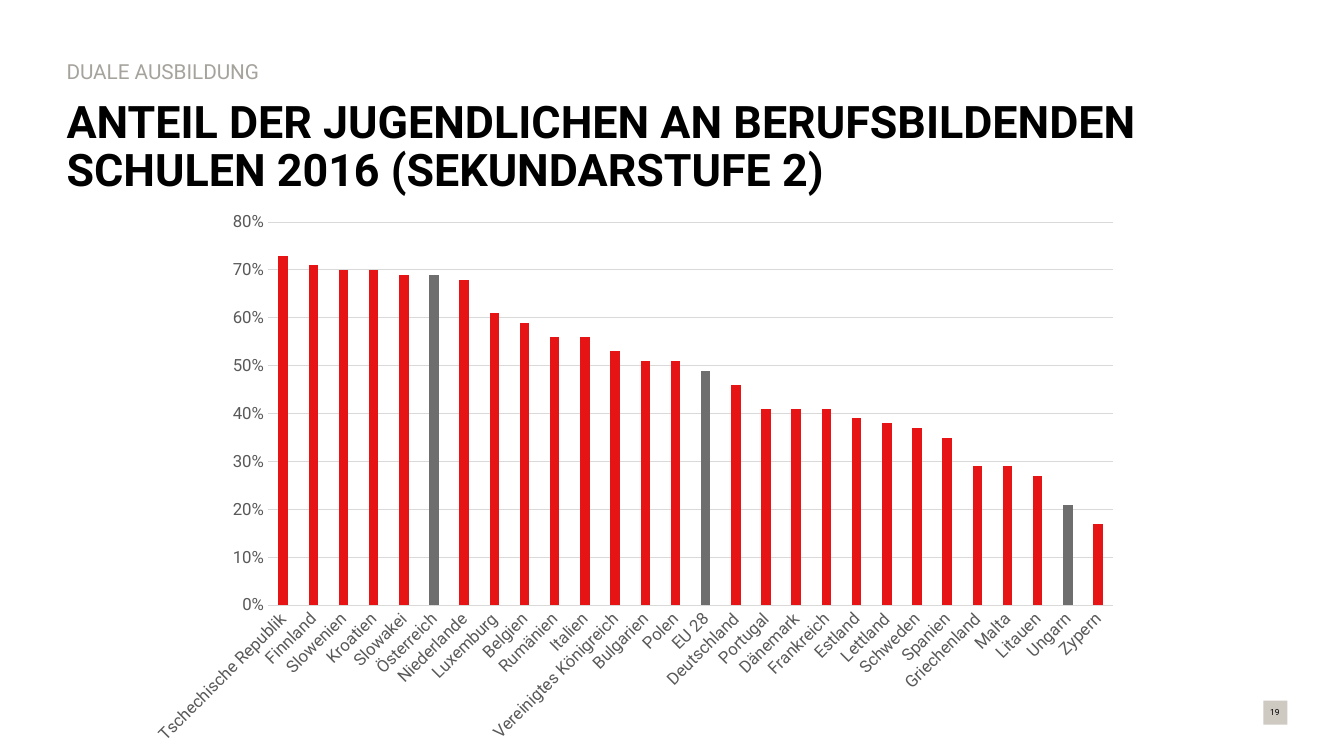
from pptx import Presentation
from pptx.chart.data import CategoryChartData
from pptx.dml.color import RGBColor
from pptx.enum.chart import XL_CHART_TYPE, XL_TICK_MARK
from pptx.enum.shapes import MSO_SHAPE
from pptx.enum.text import MSO_ANCHOR, MSO_AUTO_SIZE, PP_ALIGN
from pptx.oxml import parse_xml
from pptx.oxml.ns import nsdecls, qn
from pptx.util import Inches, Pt

COLUMN = XL_CHART_TYPE.COLUMN_CLUSTERED
NO_TICK = XL_TICK_MARK.NONE
RECT = MSO_SHAPE.RECTANGLE
MIDDLE = MSO_ANCHOR.MIDDLE
NO_FIT = MSO_AUTO_SIZE.NONE
LEFT, CENTER = PP_ALIGN.LEFT, PP_ALIGN.CENTER

FONT = "Roboto"
BLACK = RGBColor(0x00, 0x00, 0x00)
RED = RGBColor(0xE6, 0x14, 0x14)
GREY = RGBColor(0x6E, 0x6E, 0x6E)
LABEL = RGBColor(0x59, 0x59, 0x59)
GRID = RGBColor(0xD9, 0xD9, 0xD9)
TAUPE = RGBColor(0xA6, 0xA3, 0x9D)
SAND = RGBColor(0xCE, 0xCA, 0xC2)

SHARES = {
    "Tschechische Republik": 0.73, "Finnland": 0.71, "Slowenien": 0.7,
    "Kroatien": 0.7, "Slowakei": 0.69, "Österreich": 0.69,
    "Niederlande": 0.68, "Luxemburg": 0.61, "Belgien": 0.59,
    "Rumänien": 0.56, "Italien": 0.56, "Vereinigtes Königreich": 0.53,
    "Bulgarien": 0.51, "Polen": 0.51, "EU 28": 0.49, "Deutschland": 0.46,
    "Portugal": 0.41, "Dänemark": 0.41, "Frankreich": 0.41,
    "Estland": 0.39, "Lettland": 0.38, "Schweden": 0.37, "Spanien": 0.35,
    "Griechenland": 0.29, "Malta": 0.29, "Litauen": 0.27, "Ungarn": 0.21,
    "Zypern": 0.17,
}
MARKED = ("Österreich", "EU 28", "Ungarn")


def place(shape, left, top, width, height):
    shape.left, shape.top = Inches(left), Inches(top)
    shape.width, shape.height = Inches(width), Inches(height)


def set_font(font, size, color, bold=False):
    font.name, font.size, font.bold = FONT, Pt(size), bold
    font.color.rgb = color


def write(shape, text, size, color, align=LEFT, bold=False):
    """Fill a shape with one formatted paragraph and return it."""
    frame = shape.text_frame
    frame.word_wrap = True
    frame.auto_size = NO_FIT
    frame.vertical_anchor = MIDDLE
    para = frame.paragraphs[0]
    para.alignment = align
    para.space_before = Pt(0)
    run = para.add_run()
    run.text = text
    set_font(run.font, size, color, bold)
    return para


def add_heads(slide):
    title, topic = slide.shapes.title, slide.placeholders[1]
    place(title, 0.56, 0.89, 12.2, 1.16)
    para = write(title, "ANTEIL DER JUGENDLICHEN AN BERUFSBILDENDEN "
                 "SCHULEN 2016 (SEKUNDARSTUFE 2)", 32, BLACK, bold=True)
    para.line_spacing = 0.9
    place(topic, 0.56, 0.56, 6.1, 0.33)
    para = write(topic, "DUALE AUSBILDUNG", 14.8, TAUPE)
    para.line_spacing = 0.9
    props = para._p.get_or_add_pPr()
    props.set("marL", "0")
    props.set("indent", "0")
    props.append(parse_xml(f"<a:buNone {nsdecls('a')}/>"))


def add_number(slide, number):
    box = slide.shapes.add_shape(RECT, 0, 0, 0, 0)
    place(box, 12.53, 6.95, 0.24, 0.24)
    box.shadow.inherit = False
    box.fill.solid()
    box.fill.fore_color.rgb = SAND
    box.line.fill.background()
    label = slide.shapes.add_textbox(0, 0, 0, 0)
    place(label, 12.45, 6.87, 0.39, 0.39)
    write(label, number, 6, BLACK, CENTER)


def set_line(line, color):
    line.color.rgb = color
    line.width = Pt(0.75)


def style_axis(axis):
    axis.major_tick_mark = axis.minor_tick_mark = NO_TICK
    set_font(axis.tick_labels.font, 12, LABEL)


def fix_plot(chart, **parts):
    """Set the inner plot area as shares of the chart's size."""
    area = chart._chartSpace.chart.plotArea
    for old in area.findall(qn("c:layout")):
        area.remove(old)
    sizes = "".join(f'<c:{key} val="{val}"/>' for key, val in parts.items())
    area.insert(0, parse_xml(
        f'<c:layout {nsdecls("c")}><c:manualLayout>'
        '<c:layoutTarget val="inner"/><c:xMode val="edge"/>'
        f'<c:yMode val="edge"/>{sizes}</c:manualLayout></c:layout>'))


def add_bars(slide):
    data = CategoryChartData(number_format="0%")
    data.categories = list(SHARES)
    data.add_series("Series 1", list(SHARES.values()))
    frame = slide.shapes.add_chart(COLUMN, 0, 0, 0, 0, data)
    place(frame, 1.33, 2, 9.91, 5.5)
    chart = frame.chart
    chart.has_title = chart.has_legend = False
    set_font(chart.font, 10, BLACK)
    fix_plot(chart, x=0.134, y=0.037, w=0.846, h=0.691)

    plot = chart.plots[0]
    plot.gap_width, plot.overlap = 219, -27
    plot.vary_by_categories = False
    bars = plot.series[0]
    bars.invert_if_negative = False
    bars.format.fill.solid()
    bars.format.fill.fore_color.rgb = RED
    for index, land in enumerate(SHARES):
        if land in MARKED:
            fill = bars.points[index].format.fill
            fill.solid()
            fill.fore_color.rgb = GREY

    lands, shares = chart.category_axis, chart.value_axis
    style_axis(lands)
    style_axis(shares)
    set_line(lands.format.line, GRID)
    body = lands._element.find(qn("c:txPr")).find(qn("a:bodyPr"))
    body.set("rot", "-2700000")
    body.set("vert", "horz")
    shares.minimum_scale, shares.maximum_scale = 0, 0.8
    shares.major_unit = 0.1
    shares.tick_labels.number_format = "0%"
    shares.tick_labels.number_format_is_linked = False
    shares.format.line.fill.background()
    set_line(shares.major_gridlines.format.line, GRID)


def main():
    deck = Presentation()
    deck.slide_width, deck.slide_height = Inches(13.33), Inches(7.5)
    slide = deck.slides.add_slide(deck.slide_layouts[1])
    add_heads(slide)
    add_number(slide, "19")
    add_bars(slide)
    deck.save("out.pptx")


if __name__ == "__main__":
    main()
